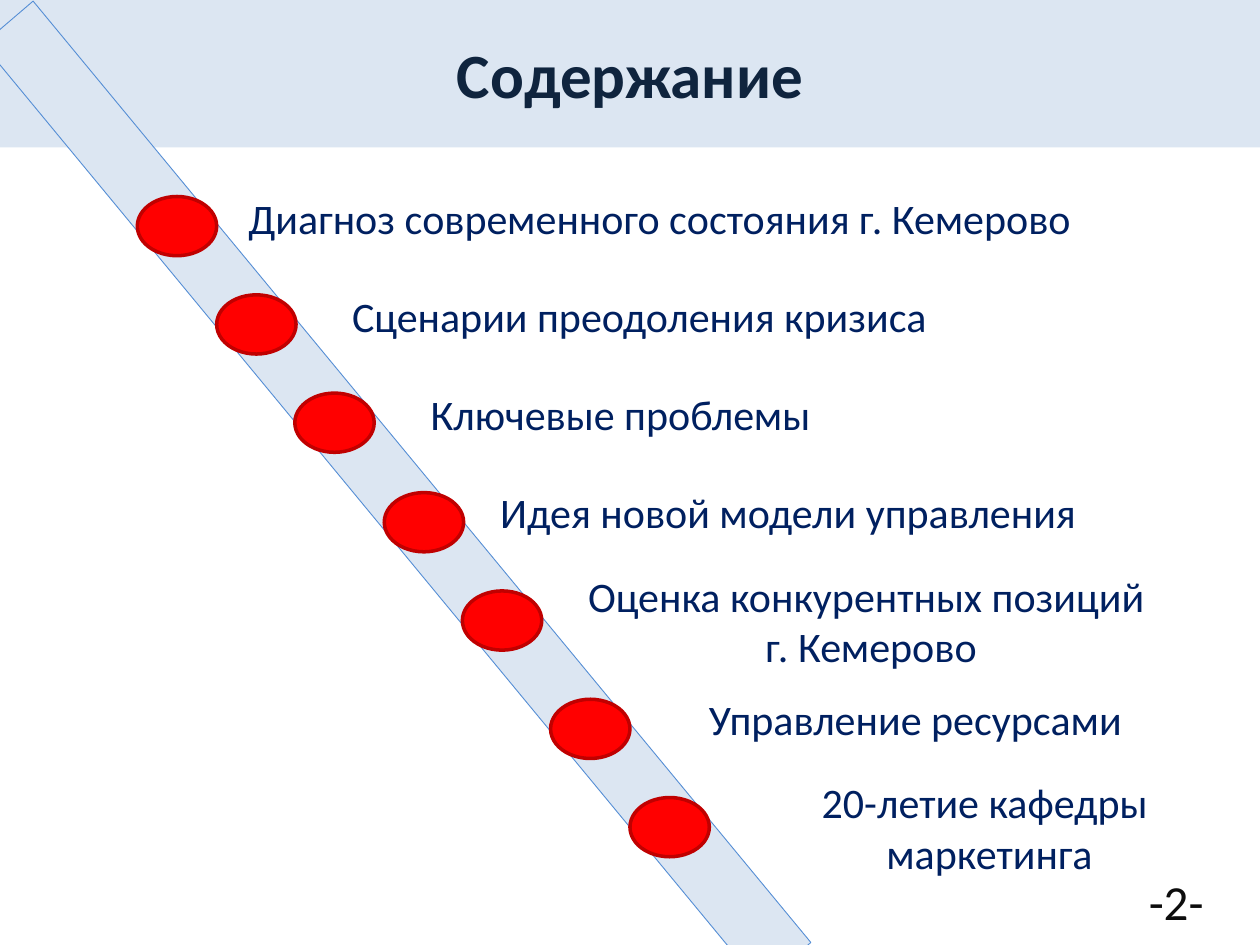
from pptx import Presentation
from pptx.dml.color import RGBColor
from pptx.enum.shapes import MSO_SHAPE
from pptx.enum.text import MSO_ANCHOR, PP_ALIGN
from pptx.util import Inches, Pt

COLORS = {
    "white": "FFFFFF",
    "band": "DCE6F2",
    "band_edge": "558ED5",
    "title": "0F243E",
    "topic": "002060",
    "number": "0D0D0D",
    "dot": "FF0000",
    "dot_edge": "C00000",
}
TITLE_FONT = {"size": Pt(36), "bold": True, "name": "Calibri"}
TOPIC_FONT = {"size": Pt(24), "name": "Calibri"}
NUMBER_FONT = {"size": Pt(28), "name": "Calibri"}
TOPIC_SIZE = (7.19, 0.63)
DOT_SIZE = (0.63, 0.47)
OUTLINED_TOPICS = [
    (1.64, 1.41, ["Диагноз современного состояния г. Кемерово"]),
    (1.48, 2.19, ["Сценарии преодоления кризиса"]),
    (1.33, 2.97, ["Ключевые проблемы"]),
]
PLAIN_TOPICS = [
    (2.66, 3.75, ["Идея новой модели управления"]),
    (3.28, 4.61, ["Оценка конкурентных позиций", " г. Кемерово"]),
    (3.67, 5.39, ["Управление ресурсами"]),
    (4.22, 6.25, ["20-летие кафедры", " маркетинга"]),
]
DOTS = [
    (1.09, 1.56), (1.72, 2.34), (2.34, 3.12), (3.05, 3.91),
    (3.67, 4.69), (4.37, 5.55), (5, 6.33),
]


def color(name):
    """Return the named palette colour."""
    return RGBColor.from_string(COLORS[name])


def add_figure(page, kind, box, fill=None, edge=None, width=2):
    """Place a preset shape with an optional fill and outline."""
    figure = page.shapes.add_shape(kind, *map(Inches, box))
    figure.shadow.inherit = False
    if fill:
        figure.fill.solid()
        figure.fill.fore_color.rgb = color(fill)
    else:
        figure.fill.background()
    if edge:
        figure.line.color.rgb = color(edge)
        figure.line.width = Pt(width)
    else:
        figure.line.fill.background()
    return figure


def write_lines(figure, lines, font_format, ink):
    """Write centred paragraphs into a shape."""
    frame = figure.text_frame
    frame.word_wrap = True
    frame.vertical_anchor = MSO_ANCHOR.MIDDLE
    for index, line in enumerate(lines):
        para = frame.add_paragraph() if index else frame.paragraphs[0]
        para.alignment = PP_ALIGN.CENTER
        span = para.add_run()
        span.text = line
        span.font.color.rgb = color(ink)
        for name, value in font_format.items():
            setattr(span.font, name, value)


def add_page_number(page, box):
    """Place the page number in its corner."""
    corner = add_figure(page, MSO_SHAPE.RECTANGLE, box, "white")
    write_lines(corner, ["-2-"], NUMBER_FONT, "number")


def add_title(page, box):
    """Place the title on its band."""
    band = add_figure(page, MSO_SHAPE.RECTANGLE, box, "band")
    write_lines(band, ["Содержание"], TITLE_FONT, "title")


def add_topics(page):
    """Place the outlined topics and then the plain ones."""
    for left, top, lines in OUTLINED_TOPICS:
        box = (left, top, *TOPIC_SIZE)
        topic = add_figure(page, MSO_SHAPE.RECTANGLE, box, edge="white")
        write_lines(topic, lines, TOPIC_FONT, "topic")
    for left, top, lines in PLAIN_TOPICS:
        box = (left, top, *TOPIC_SIZE)
        topic = page.shapes.add_textbox(*map(Inches, box))
        write_lines(topic, lines, TOPIC_FONT, "topic")


def add_path_of_dots(page, box):
    """Place the slanted strip and the dots along it."""
    strip = add_figure(page, MSO_SHAPE.PARALLELOGRAM, box, "band", "band_edge", 0.5)
    strip.rotation = 319.4
    for left, top in DOTS:
        add_figure(page, MSO_SHAPE.OVAL, (left, top, *DOT_SIZE), "dot", "dot_edge")


def main():
    """Build the contents slide and save the deck."""
    deck = Presentation()
    deck.slide_width, deck.slide_height = Inches(10), Inches(7.5)
    page = deck.slides.add_slide(deck.slide_layouts[6])
    add_page_number(page, (8.67, 6.8, 1.33, 0.7))
    add_title(page, (0, 0, 10, 1.17))
    add_topics(page)
    add_path_of_dots(page, (2.8, -0.93, 0.7, 9.69))
    deck.save("out.pptx")


if __name__ == "__main__":
    main()
